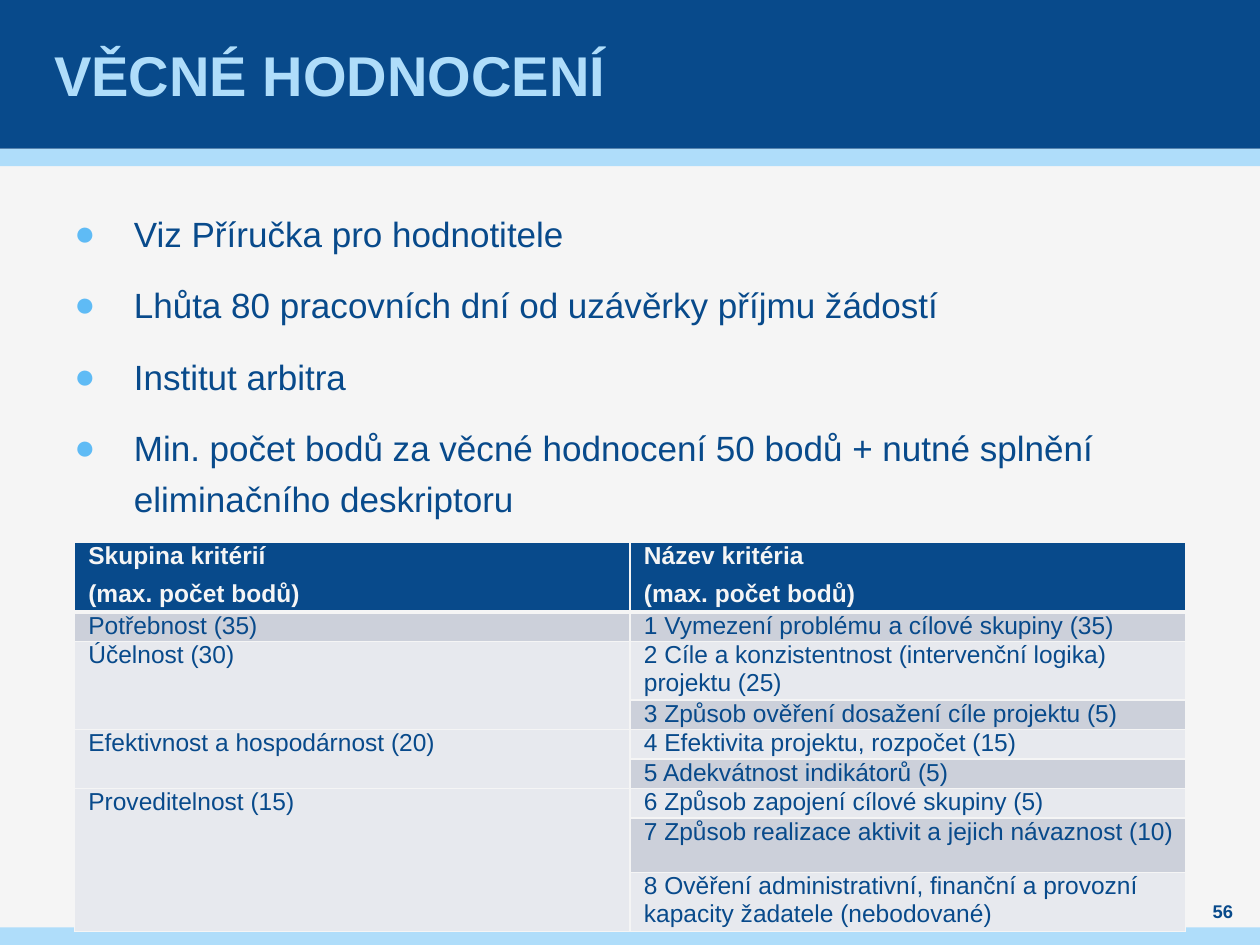
import lxml.etree
import pptx
import pptx.dml.color
import pptx.enum.shapes
import pptx.enum.text
import pptx.oxml.ns
import pptx.util

Pt = pptx.util.Pt
qn = pptx.oxml.ns.qn
ANCHOR = pptx.enum.text.MSO_ANCHOR
ALIGN = pptx.enum.text.PP_ALIGN
NAVY, SKY, PAPER = "084A8B", "AFDDFA", "F5F5F5"


def color(value):
    return pptx.dml.color.RGBColor.from_string(value)


def write(frame, text, size=14, fill=NAVY, bold=False, align=ALIGN.LEFT, anchor=ANCHOR.TOP,
          before=0, after=0, line=None, indent=0, hanging=0, bullet=None):
    """Fill a text frame, one paragraph for each line of text."""
    frame.word_wrap = True
    frame.vertical_anchor = anchor
    frame.text = text
    for para in frame.paragraphs:
        para.alignment = align
        para.space_before, para.space_after = Pt(before), Pt(after)
        para.line_spacing = line
        font = para.runs[0].font
        font.name, font.size, font.bold = "Arial", Pt(size), bold
        font.color.rgb = color(fill)
        props = para._p.get_or_add_pPr()
        props.set("marL", str(Pt(indent)))
        props.set("indent", str(Pt(-hanging)))
        if bullet:
            bullet_color = lxml.etree.SubElement(props, qn("a:buClr"))
            lxml.etree.SubElement(bullet_color, qn("a:srgbClr"), val="5FBBF5")
            lxml.etree.SubElement(props, qn("a:buFont"), typeface="Arial")
            lxml.etree.SubElement(props, qn("a:buChar"), char=bullet)


deck = pptx.Presentation()
deck.slide_width, deck.slide_height = Pt(720), Pt(540)
page = deck.slides.add_slide(deck.slide_layouts[5])
page.background.fill.solid()
page.background.fill.fore_color.rgb = color(PAPER)

# Header and footer bands
for top, height, fill in [(85, 10, SKY), (0, 85, NAVY), (530, 10, SKY)]:
    band = page.shapes.add_shape(pptx.enum.shapes.MSO_SHAPE.RECTANGLE,
                                 0, Pt(top), Pt(720), Pt(height))
    band.shadow.inherit = False
    band.fill.solid()
    band.fill.fore_color.rgb = color(fill)
    band.line.fill.background()

# Title, brought in front of the bands
title = page.shapes.title
title.left, title.top, title.width, title.height = Pt(28), Pt(0), Pt(663), Pt(85)
frame = title.text_frame
frame.margin_left = frame.margin_right = Pt(3)
frame.margin_top = frame.margin_bottom = 0
write(frame, "VĚCNÉ HODNOCENÍ", size=32, fill=SKY, bold=True, anchor=ANCHOR.MIDDLE)
title.element.getparent().append(title.element)

# Bullet list and page number
bullets = "\n".join([
    "Viz Příručka pro hodnotitele",
    "Lhůta 80 pracovních dní od uzávěrky příjmu žádostí",
    "Institut arbitra",
    "Min. počet bodů za věcné hodnocení 50 bodů + nutné splnění eliminačního deskriptoru",
])
text_boxes = [
    ((42.5, 116.6, 635, 317.5), bullets,
     dict(size=20, before=6, after=6, line=Pt(28.8), indent=34, hanging=34, bullet="●")),
    ((680.4, 513.4, 36.7, 14.4), "56",
     dict(size=10.5, bold=True, align=ALIGN.CENTER, anchor=ANCHOR.MIDDLE)),
]
for place, text, style in text_boxes:
    box = page.shapes.add_textbox(*map(Pt, place))
    frame = box.text_frame
    frame.margin_left = frame.margin_right = frame.margin_top = frame.margin_bottom = 0
    write(frame, text, **style)

# Criteria table: group, criterion, number of lines
rows = [
    ("Skupina kritérií\n(max. počet bodů)", "Název kritéria\n(max. počet bodů)", 2),
    ("Potřebnost (35)", "1 Vymezení problému a cílové skupiny (35)", 1),
    ("Účelnost (30)", "2 Cíle a konzistentnost (intervenční logika) projektu (25)", 2),
    ("", "3 Způsob ověření dosažení cíle projektu (5)", 1),
    ("Efektivnost a hospodárnost (20)", "4 Efektivita projektu, rozpočet (15)", 1),
    ("", "5 Adekvátnost indikátorů (5)", 1),
    ("Proveditelnost (15)", "6 Způsob zapojení cílové skupiny (5)", 1),
    ("", "7 Způsob realizace aktivit a jejich návaznost (10)", 2),
    ("", "8 Ověření administrativní, finanční a provozní kapacity žadatele (nebodované)", 2),
]
table = page.shapes.add_table(len(rows), 2, Pt(42.5), Pt(310), Pt(635), Pt(207)).table
table.first_row = table.horz_banding = False
for column in table.columns:
    column.width = Pt(317.5)
for first, last in [(2, 3), (4, 5), (6, 8)]:
    table.cell(first, 0).merge(table.cell(last, 0))

for row, (group, criterion, lines) in enumerate(rows):
    header = row == 0
    table.rows[row].height = Pt(37 if header else 15.6 * lines)
    for column, text in enumerate((group, criterion)):
        cell = table.cell(row, column)
        cell.margin_left = cell.margin_right = Pt(5)
        cell.margin_top = cell.margin_bottom = 0
        if text:
            write(cell.text_frame, text, fill=PAPER if header else NAVY, bold=header,
                  before=3, after=3, indent=3)
        shaded = row % 2 == 1 and not cell.is_spanned
        cell.fill.solid()
        cell.fill.fore_color.rgb = color(NAVY if header else "CCD0DA" if shaded else "E7E9EE")
        props = cell._tc.get_or_add_tcPr()
        for place, side in enumerate("LRTB"):
            thick = (header and side == "B") or (row == 1 and side == "T")
            border = lxml.etree.Element(qn("a:ln" + side), w=str(Pt(3 if thick else 1)))
            paint = lxml.etree.SubElement(border, qn("a:solidFill"))
            lxml.etree.SubElement(paint, qn("a:srgbClr"), val=PAPER)
            props.insert(place, border)

deck.save("out.pptx")
